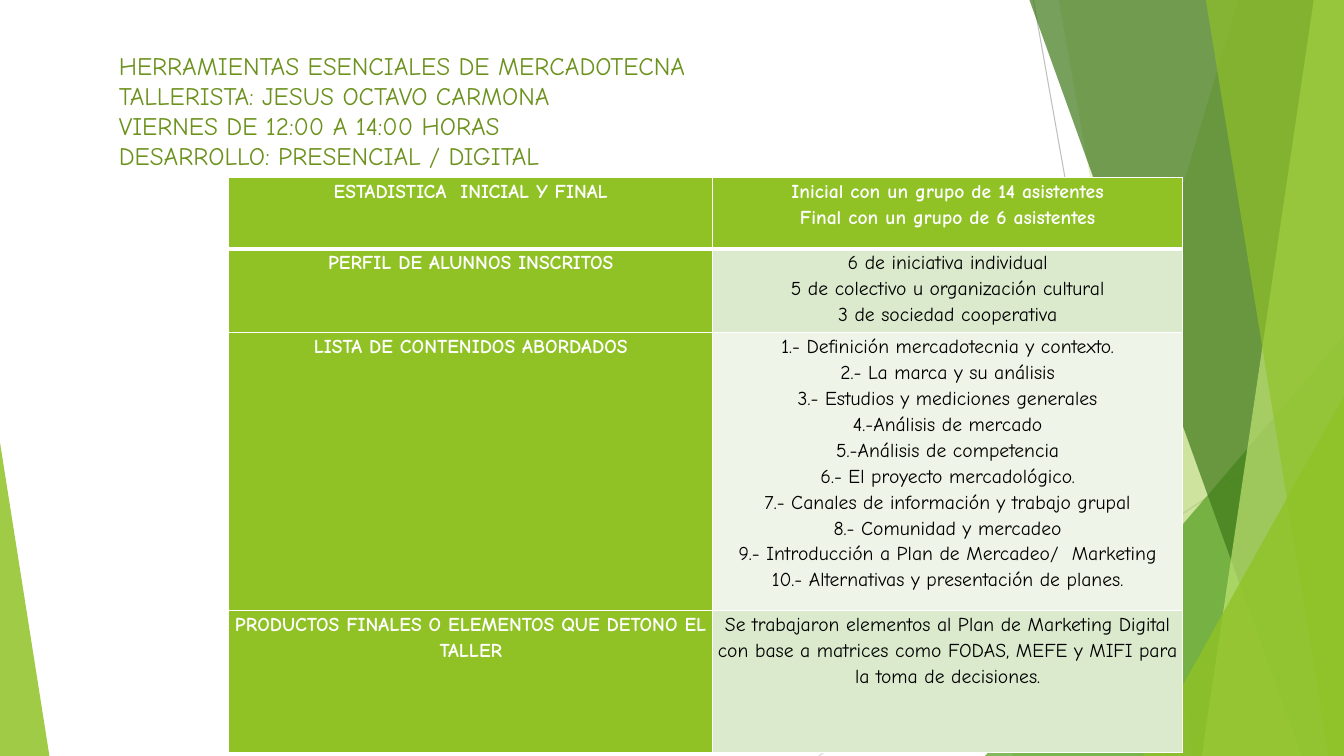
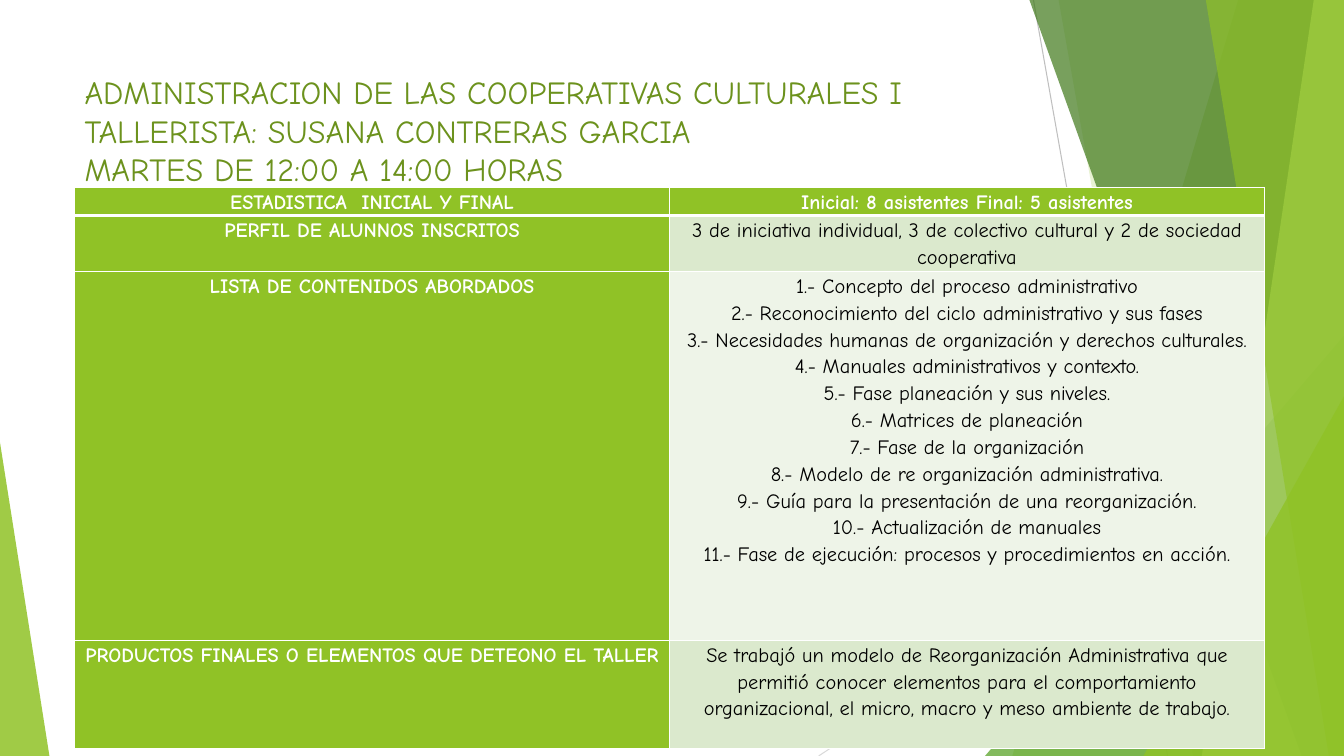
from lxml import etree
from pptx import Presentation
from pptx import util as u
from pptx.dml import color
from pptx.enum import shapes, text
from pptx.oxml import ns

FONT = "Comic Neue"
GREEN, TITLE, WHITE, BLACK = "90C226", "6C921D", "FFFFFF", "000000"
BANDS = ("EEF4E8", "DBE9CD")
WIDE, HIGH = 13.33, 7.5


def paint(target, code, alpha=100):
    """Give a fill or line a solid colour with an opacity in percent."""
    fill = target.fill
    fill.solid()
    fill.fore_color.rgb = color.RGBColor.from_string(code)
    if alpha < 100:
        tone = target._element.spPr.find(".//" + ns.qn("a:srgbClr"))
        etree.SubElement(tone, ns.qn("a:alpha"), val=str(alpha * 1000))


def write(frame, words, size, code, bold=False, align=None, space=None):
    """Fill a text frame and format every run."""
    frame.text = words
    frame.word_wrap = True
    for para in frame.paragraphs:
        para.alignment = align
        para.line_spacing = space
        for run in para.runs:
            font = run.font
            font.name, font.size, font.bold = FONT, u.Pt(size), bold
            font.color.rgb = color.RGBColor.from_string(code)


def add_ray(group, start, end, code):
    """Draw a thin line between two points."""
    ends = [u.Inches(n) for n in start + end]
    ray = group.shapes.add_connector(shapes.MSO_CONNECTOR.STRAIGHT, *ends)
    ray.line.width = u.Pt(0.75)
    paint(ray.line, code)
    etree.SubElement(ray._element.spPr, ns.qn("a:effectLst"))


def finish(shape, code, alpha):
    """Fill a facet and drop its outline and shadow."""
    paint(shape, code, alpha)
    shape.line.fill.background()
    shape.shadow.inherit = False


def add_shard(group, top, foot, code, alpha):
    """Draw a facet from a slanted left side to the right slide edge."""
    pts = [(top, 0), (WIDE, 0), (WIDE, HIGH), (foot, HIGH)]
    pts = [(u.Inches(x), u.Inches(y)) for x, y in pts]
    build = group.shapes.build_freeform(*pts[0])
    build.add_line_segments(pts[1:], close=True)
    finish(build.convert_to_shape(), code, alpha)


def add_wedge(group, left, top, width, tip, code, alpha):
    """Draw a right triangle that stands on the slide's foot."""
    box = [u.Inches(n) for n in (left, top, width, HIGH - top)]
    wedge = group.shapes.add_shape(shapes.MSO_SHAPE.ISOSCELES_TRIANGLE, *box)
    wedge.adjustments[0] = tip
    finish(wedge, code, alpha)


def add_decor(slide):
    """Draw the green facets shared by all slides."""
    group = slide.shapes.add_group_shape()
    add_ray(group, (10.25, 0), (11.58, HIGH), "BFBFBF")
    add_ray(group, (WIDE, 4.03), (8.12, HIGH), "D9D9D9")
    add_shard(group, 12.28, 10.04, GREEN, 30)
    add_shard(group, 10.5, 11.83, GREEN, 20)
    add_wedge(group, 9.77, 3.33, 3.56, 1, "54A021", 72)
    add_shard(group, 10.21, 12.91, "3F7819", 70)
    add_shard(group, 13.03, 11.92, "C0E474", 70)
    add_shard(group, 11.96, 13.18, GREEN, 65)
    add_wedge(group, 11.34, 3.93, 1.99, 1, GREEN, 80)
    add_wedge(group, 0, 4.39, 0.49, 0, GREEN, 85)


def add_title(slide, box, lines, size, anchor):
    """Write the workshop heading inside its box."""
    frame = slide.shapes.add_textbox(*[u.Inches(n) for n in box]).text_frame
    write(frame, "\n".join(lines), size, TITLE)
    frame.vertical_anchor = anchor


def add_edges(cell, row):
    """Draw white cell borders, thick below the header row."""
    props = cell._tc.get_or_add_tcPr()
    for side in "LRTB":
        thick = (row, side) in ((0, "B"), (1, "T"))
        line = etree.SubElement(props, ns.qn("a:ln" + side),
                                w=str(u.Pt(3 if thick else 1)))
        fill = etree.SubElement(line, ns.qn("a:solidFill"))
        etree.SubElement(fill, ns.qn("a:srgbClr"), val=WHITE)


def add_grid(slide, left, top, cols, rows, data, size, inset):
    """Place the two-column workshop table."""
    box = [u.Inches(n) for n in (left, top, sum(cols), sum(rows))]
    table = slide.shapes.add_table(len(rows), len(cols), *box).table
    table.horz_banding = False
    for col, width in zip(table.columns, cols):
        col.width = u.Inches(width)
    for r, pair in enumerate(data):
        table.rows[r].height = u.Inches(rows[r])
        for c, words in enumerate(pair):
            cell = table.cell(r, c)
            head = r == 0 or c == 0
            add_edges(cell, r)
            paint(cell, GREEN if head else BANDS[r % 2])
            cell.margin_left = cell.margin_right = u.Inches(inset)
            cell.margin_top = cell.margin_bottom = 0
            write(cell.text_frame, words, size, WHITE if head else BLACK,
                  head, text.PP_ALIGN.CENTER, 1.15)


def add_page(deck, title, grid):
    """Add one workshop slide."""
    slide = deck.slides.add_slide(deck.slide_layouts[6])
    add_decor(slide)
    add_title(slide, **title)
    add_grid(slide, **grid)


MARKET = [
    ("ESTADISTICA  INICIAL Y FINAL",
     "Inicial con un grupo de 14 asistentes\n"
     "Final con un grupo de 6 asistentes"),
    ("PERFIL DE ALUNNOS INSCRITOS",
     "6 de iniciativa individual\n"
     "5 de colectivo u organización cultural\n"
     "3 de sociedad cooperativa"),
    ("LISTA DE CONTENIDOS ABORDADOS",
     "1.- Definición mercadotecnia y contexto.\n"
     "2.- La marca y su análisis\n"
     "3.- Estudios y mediciones generales\n"
     "4.-Análisis de mercado\n"
     "5.-Análisis de competencia\n"
     "6.- El proyecto mercadológico.\n"
     "7.- Canales de información y trabajo grupal\n"
     "8.- Comunidad y mercadeo\n"
     "9.- Introducción a Plan de Mercadeo/  Marketing\n"
     "10.- Alternativas y presentación de planes."),
    ("PRODUCTOS FINALES O ELEMENTOS QUE DETONO EL TALLER",
     "Se trabajaron elementos al Plan de Marketing Digital con base a "
     "matrices como FODAS, MEFE y MIFI para la toma de decisiones."),
]

ADMIN = [
    ("ESTADISTICA  INICIAL Y FINAL",
     "Inicial: 8 asistentes Final: 5 asistentes"),
    ("PERFIL DE ALUNNOS INSCRITOS",
     "3 de iniciativa individual, 3 de colectivo cultural y 2 de sociedad "
     "cooperativa"),
    ("LISTA DE CONTENIDOS ABORDADOS",
     "1.- Concepto del proceso administrativo\n"
     "2.- Reconocimiento del ciclo administrativo y sus fases\n"
     "3.- Necesidades humanas de organización y derechos culturales.\n"
     "4.- Manuales administrativos y contexto.\n"
     "5.- Fase planeación y sus niveles.\n"
     "6.- Matrices de planeación\n"
     "7.- Fase de la organización\n"
     "8.- Modelo de re organización administrativa.\n"
     "9.- Guía para la presentación de una reorganización.\n"
     "10.- Actualización de manuales\n"
     "11.- Fase de ejecución: procesos y procedimientos en acción."),
    ("PRODUCTOS FINALES O ELEMENTOS QUE DETEONO EL TALLER",
     "Se trabajó un modelo de Reorganización Administrativa que permitió "
     "conocer elementos para el comportamiento organizacional, el micro, "
     "macro y meso ambiente de trabajo."),
]


def main():
    """Build and save the deck."""
    deck = Presentation()
    deck.slide_width, deck.slide_height = u.Inches(WIDE), u.Inches(HIGH)
    add_page(
        deck,
        dict(box=(1.08, 0.44, 9.69, 1.31), size=18,
             anchor=text.MSO_ANCHOR.MIDDLE,
             lines=["HERRAMIENTAS ESENCIALES DE MERCADOTECNA",
                    "TALLERISTA: JESUS OCTAVO CARMONA",
                    "VIERNES DE 12:00 A 14:00 HORAS",
                    "DESARROLLO: PRESENCIAL / DIGITAL"]),
        dict(left=2.27, top=1.76, cols=(4.8, 4.66),
             rows=(0.71, 0.83, 2.76, 1.41), data=MARKET, size=14,
             inset=0.04))
    add_page(
        deck,
        dict(box=(0.74, 0.67, 10.7, 1.44), size=23,
             anchor=text.MSO_ANCHOR.TOP,
             lines=["ADMINISTRACION DE LAS COOPERATIVAS CULTURALES I",
                    "TALLERISTA: SUSANA CONTRERAS GARCIA",
                    "MARTES DE 12:00 A 14:00 HORAS"]),
        dict(left=0.74, top=1.86, cols=(5.9, 5.9),
             rows=(0.27, 0.53, 3.66, 1.07), data=ADMIN, size=14.5,
             inset=0.06))
    deck.save("out.pptx")


if __name__ == "__main__":
    main()
